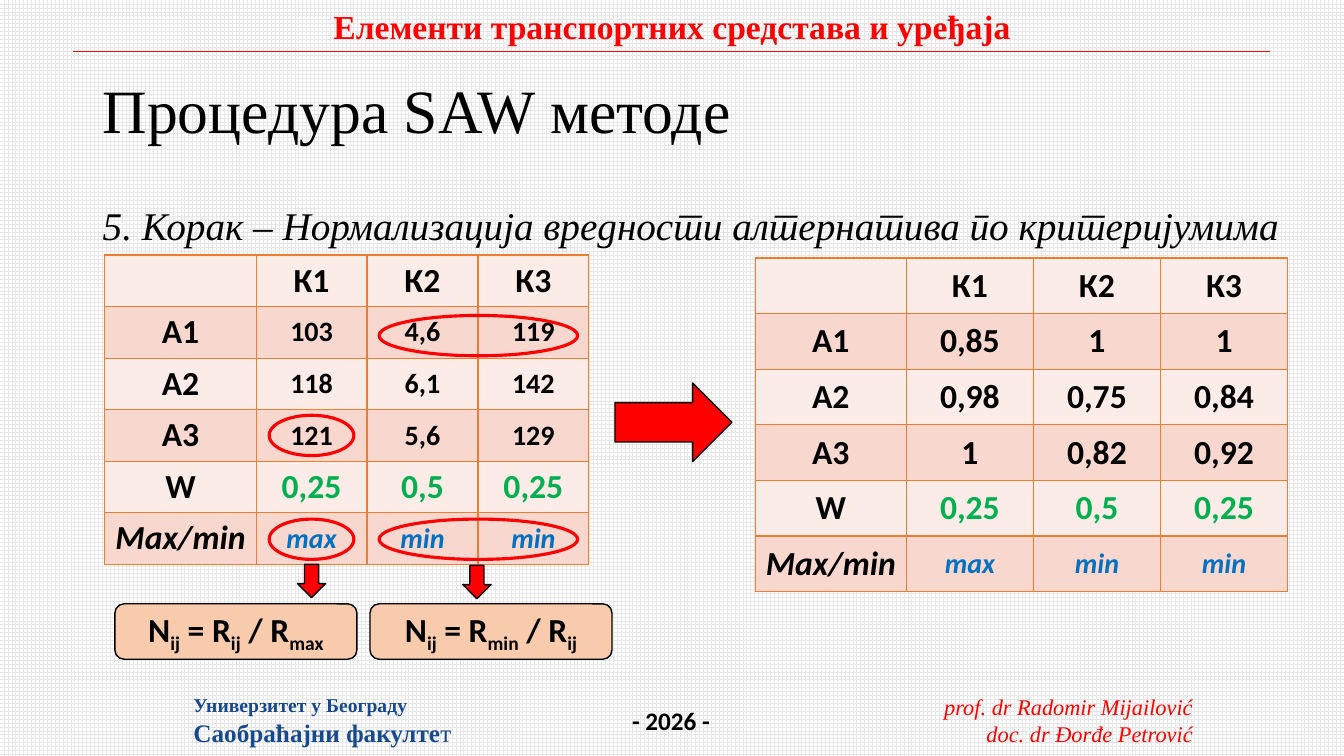
from lxml.etree import SubElement
from pptx import Presentation
from pptx.dml.color import RGBColor
from pptx.enum.dml import MSO_PATTERN
from pptx.enum.shapes import MSO_CONNECTOR, MSO_SHAPE as SHAPE
from pptx.enum.text import MSO_ANCHOR as ANCHOR, PP_ALIGN as ALIGN
from pptx.oxml.ns import qn
from pptx.util import Pt

PX = 9144  # 100 px to the inch

RED = RGBColor(0xFF, 0x00, 0x00)
BLACK = RGBColor(0x00, 0x00, 0x00)
WHITE = RGBColor(0xFF, 0xFF, 0xFF)
GRID_GRAY = RGBColor(0xE7, 0xE6, 0xE6)
NAVY = RGBColor(0x16, 0x49, 0x8E)
GREEN = RGBColor(0x00, 0xB0, 0x50)
BLUE = RGBColor(0x00, 0x70, 0xC0)
ORANGE = RGBColor(0xED, 0x7D, 0x31)
PEACH = RGBColor(0xF8, 0xCB, 0xAD)
BANDS = (RGBColor(0xFC, 0xEC, 0xE8), RGBColor(0xF8, 0xD7, 0xCE))

SERIF, SANS = "Times New Roman", "Calibri"


def scale(*lengths):
    return [round(length * PX) for length in lengths]


def add_text(paragraph, text, size=24, font=SANS, color=BLACK, bold=False,
             italic=False, align=None, spacing=None):
    """Append text to a paragraph; every second part between bars is a subscript."""
    if align is not None:
        paragraph.alignment = align
    if spacing:
        paragraph.line_spacing = spacing
    for index, part in enumerate(text.split("|")):
        run = paragraph.add_run()
        run.text = part
        run.font.size, run.font.name = Pt(size), font
        run.font.bold, run.font.italic = bold, italic
        run.font.color.rgb = color
        properties = run._r.get_or_add_rPr()
        properties.set("lang", "sr-Cyrl-RS")
        if index % 2:
            properties.set("baseline", "-25000")


class SlideBuilder:
    def __init__(self, presentation):
        self.slide = presentation.slides.add_slide(presentation.slide_layouts[6])
        self.shapes = self.slide.shapes

    def background(self):
        fill = self.slide.background.fill
        fill.patterned()
        fill.pattern = MSO_PATTERN.LARGE_GRID
        fill.fore_color.rgb, fill.back_color.rgb = GRID_GRAY, WHITE

    def text_box(self, box, lines, anchor=ANCHOR.TOP, **style):
        """Each line is a text with its own format; returns the text frame."""
        frame = self.shapes.add_textbox(*scale(*box)).text_frame
        frame.word_wrap = False
        frame.vertical_anchor = anchor
        for index, (text, own) in enumerate(lines):
            paragraph = frame.add_paragraph() if index else frame.paragraphs[0]
            add_text(paragraph, text, **{**style, **own})
        return frame

    def rule(self, x1, y, x2, color, width):
        connector = self.shapes.add_connector(
            MSO_CONNECTOR.STRAIGHT, *scale(x1, y, x2, y))
        connector.line.color.rgb, connector.line.width = color, Pt(width)
        SubElement(connector._element.spPr, qn("a:effectLst"))

    def shape(self, kind, box, fill=None, line=BLACK, width=1, text=None):
        shape = self.shapes.add_shape(kind, *scale(*box))
        shape.shadow.inherit = False
        if fill is None:
            shape.fill.background()
        else:
            shape.fill.solid()
            shape.fill.fore_color.rgb = fill
        shape.line.color.rgb, shape.line.width = line, Pt(width)
        if text:
            shape.text_frame.vertical_anchor = ANCHOR.MIDDLE
            add_text(shape.text_frame.paragraphs[0], text, bold=True,
                     align=ALIGN.CENTER)

    def border(self, cell, color, width):
        properties = cell._tc.get_or_add_tcPr()
        for side in ("lnL", "lnR", "lnT", "lnB"):
            line = SubElement(properties, qn(f"a:{side}"), w=str(Pt(width)))
            fill = SubElement(line, qn("a:solidFill"))
            SubElement(fill, qn("a:srgbClr"), val=str(color))

    def table(self, left, top, columns, height, rows, value_size):
        graphic = self.shapes.add_table(
            len(rows), len(columns), *scale(left, top, sum(columns), height))
        table = graphic.table
        for column, width in zip(table.columns, columns):
            column.width = width * PX
        for i, row in enumerate(rows):
            table.rows[i].height = round(height * PX / len(rows))
            for j, text in enumerate(row):
                cell = table.cell(i, j)
                cell.vertical_anchor = ANCHOR.MIDDLE
                cell.margin_left = cell.margin_right = 5 * PX
                self.border(cell, ORANGE, 1)
                cell.fill.solid()
                cell.fill.fore_color.rgb = BANDS[i % 2]
                if text:
                    add_text(cell.text_frame.paragraphs[0], text, bold=True,
                             align=ALIGN.CENTER, **cell_style(row[0], i, j, value_size))


def cell_style(label, i, j, value_size):
    if label == "Max/min":
        return dict(italic=True, **(dict(size=20, color=BLUE) if j else {}))
    if label == "W" and j:
        return dict(color=GREEN)
    return dict(size=value_size) if i and j else {}


def table_rows(*values):
    """Frame the values of the alternatives with the shared header and last rows."""
    alternatives = [(f"А{n}", *row) for n, row in enumerate(values, 1)]
    return [("", "К1", "К2", "К3"), *alternatives,
            ("W", "0,25", "0,5", "0,25"), ("Max/min", "max", "min", "min")]


def main():
    presentation = Presentation()
    presentation.slide_width, presentation.slide_height = scale(1333, 750)
    builder = SlideBuilder(presentation)
    builder.background()

    # Header and footer
    builder.text_box((922, 683, 271, 64),
                     [("prof. dr Radomir Mijailović", {}), ("doc. dr Đorđe Petrović", {})],
                     size=16, font=SERIF, color=RED, italic=True, align=ALIGN.RIGHT)
    builder.rule(72, 51, 1260, RED, 0.5)
    builder.text_box((317, 1, 699, 50), [("Елементи транспортних средстава и уређаја", {})],
                     font=SERIF, color=RED, bold=True, align=ALIGN.CENTER)
    builder.text_box((617, 695, 98, 40), [("- 2026 -", {})], size=18, bold=True)
    faculty = builder.text_box(
        (182, 683, 279, 64),
        [("Универзитет у Београду", dict(size=14)), ("Саобраћајни факулте", dict(size=18))],
        font=SERIF, color=NAVY, bold=True)
    add_text(faculty.paragraphs[1], "т", size=18, font=SERIF, color=NAVY)

    # Title and step
    builder.text_box((92, 40, 1150, 145), [("Процедура SAW методе", {})], ANCHOR.MIDDLE,
                     size=44, font=SERIF, align=ALIGN.LEFT, spacing=0.9)
    builder.text_box(
        (92, 200, 1189, 476),
        [("5. Корак – Нормализација вредности алтернатива по критеријумима", {})],
        size=28, font=SERIF, italic=True, align=ALIGN.LEFT, spacing=0.9)

    # Input values and normalised values
    builder.table(104, 253, (150, 110, 110, 110), 307, table_rows(
        ("103", "4,6", "119"), ("118", "6,1", "142"), ("121", "5,6", "129")), 20)
    builder.table(749, 256, (150, 126, 126, 126), 331, table_rows(
        ("0,85", "1", "1"), ("0,98", "0,75", "0,84"), ("1", "0,82", "0,92")), 24)

    # Rings around the best values and the criterion types
    for left, width, best_top in ((267, 84, 412), (376, 197, 313)):
        for top in (best_top, 515):
            builder.shape(SHAPE.OVAL, (left, top, width, 40), line=RED, width=2.25)

    # Formulas with their arrows
    for arrow_left, arrow_top, left, formula in (
            (295, 560, 114, "N|ij| = R|ij| / R|max"),
            (459, 561, 367, "N|ij| = R|min| / R|ij")):
        builder.shape(SHAPE.DOWN_ARROW, (arrow_left, arrow_top, 28, 33), RED)
        builder.shape(SHAPE.ROUNDED_RECTANGLE, (left, 599, 240, 55), PEACH, text=formula)

    # Arrow between the tables
    builder.shape(SHAPE.RIGHT_ARROW, (610, 380, 116, 78), RED)

    presentation.save("out.pptx")


if __name__ == "__main__":
    main()
